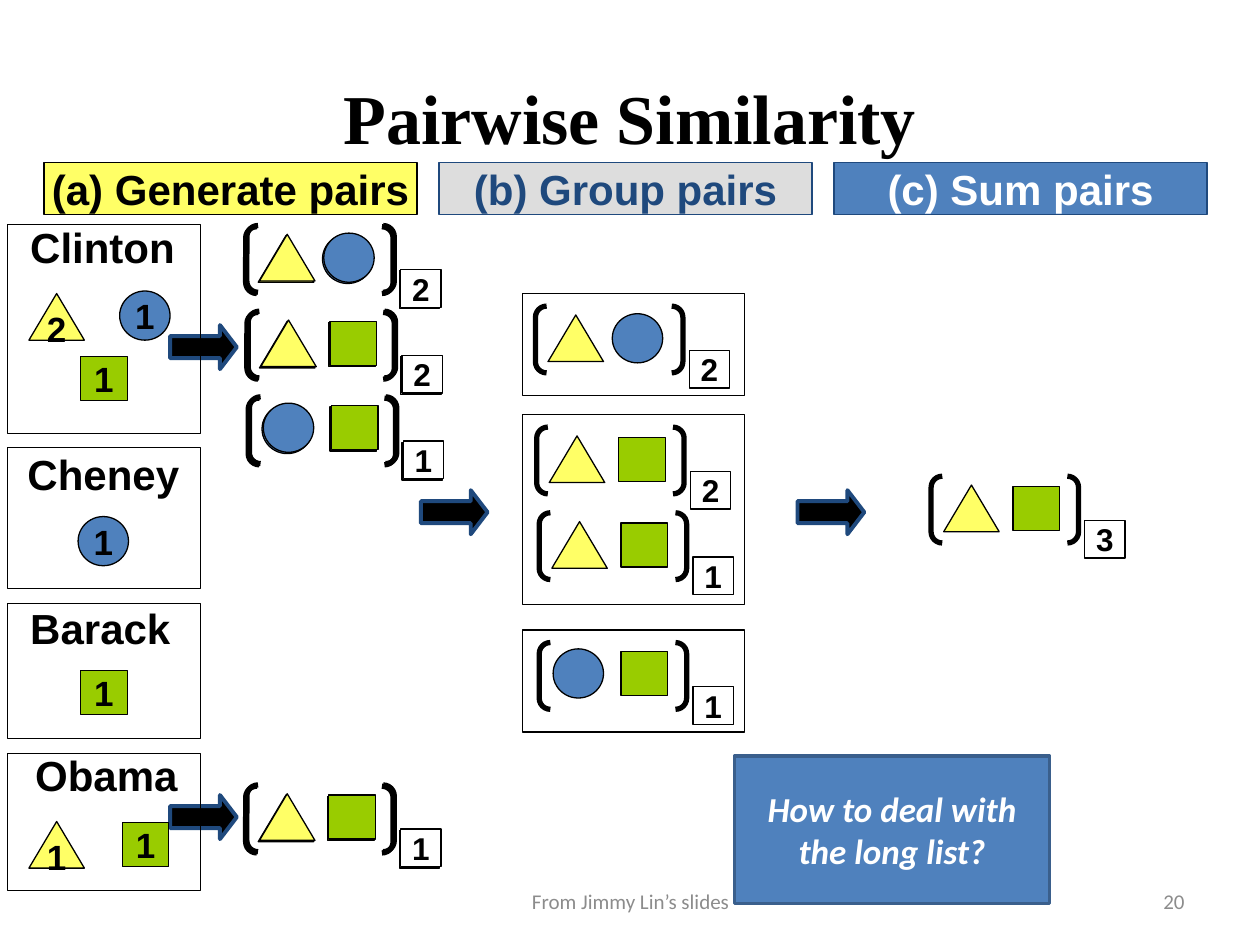
"""Build the Pairwise Similarity slide: generate, group and sum pairs."""
from typing import NamedTuple

from pptx import Presentation
from pptx.dml.color import RGBColor
from pptx.enum.shapes import MSO_SHAPE as SHAPE
from pptx.enum.text import MSO_ANCHOR as ANCHOR, PP_ALIGN as ALIGN
from pptx.util import Inches, Pt

BLACK, WHITE, NAVY, GREY = "000000", "FFFFFF", "1F497D", "8C8C8C"
YELLOW, BLUE, GREEN, SILVER = "FFFF66", "4F81BD", "99CC00", "DDDDDD"


class Mark(NamedTuple):
    kind: SHAPE
    w: float
    h: float
    fill: str


class Term(NamedTuple):
    mark: Mark
    x: float
    y: float
    count: str


class Document(NamedTuple):
    name: str
    name_x: float
    name_y: float
    align: ALIGN
    y: float
    h: float
    terms: list[Term]


class Slot(NamedTuple):
    mark: Mark
    dx: float
    dy: float


class Pair(NamedTuple):
    x: float
    y: float
    slots: list[Slot]
    count: str


class Header(NamedTuple):
    text: str
    fill: str
    color: str
    line: str


TRIANGLE = Mark(SHAPE.ISOSCELES_TRIANGLE, 0.44, 0.37, YELLOW)
CIRCLE = Mark(SHAPE.OVAL, 0.4, 0.39, BLUE)
SQUARE = Mark(SHAPE.RECTANGLE, 0.37, 0.35, GREEN)

TRIANGLE_CIRCLE = [Slot(TRIANGLE, 0.1, 0.07), Slot(CIRCLE, 0.61, 0.06)]
TRIANGLE_SQUARE = [Slot(TRIANGLE, 0.1, 0.07), Slot(SQUARE, 0.65, 0.08)]
CIRCLE_SQUARE = [Slot(CIRCLE, 0.11, 0.05), Slot(SQUARE, 0.65, 0.07)]

HEADERS = [
    Header("(a) Generate pairs", YELLOW, BLACK, BLACK),
    Header("(b) Group pairs", SILVER, NAVY, NAVY),
    Header("(c) Sum pairs", BLUE, WHITE, NAVY),
]
DOCUMENTS = [
    Document("Clinton", 0.24, 1.76, ALIGN.LEFT, 1.78, 1.66, [
        Term(TRIANGLE, 0.23, 2.33, "2"),
        Term(CIRCLE, 0.95, 2.31, "1"),
        Term(SQUARE, 0.64, 2.83, "1"),
    ]),
    Document("Cheney", 0.11, 3.56, ALIGN.CENTER, 3.55, 1.12,
             [Term(CIRCLE, 0.62, 4.1, "1")]),
    Document("Barack", 0.24, 4.78, ALIGN.LEFT, 4.79, 1.07,
             [Term(SQUARE, 0.64, 5.32, "1")]),
    Document("Obama", 0.28, 5.95, ALIGN.LEFT, 5.98, 1.09, [
        Term(TRIANGLE, 0.23, 6.52, "1"),
        Term(SQUARE, 0.97, 6.53, "1"),
    ]),
]
GENERATED = [
    Pair(1.96, 1.79, TRIANGLE_CIRCLE, "2"),
    Pair(1.97, 2.47, TRIANGLE_SQUARE, "2"),
    Pair(1.98, 3.15, CIRCLE_SQUARE, "1"),
    Pair(1.96, 6.23, TRIANGLE_SQUARE, "1"),
]
GROUPED = [
    Pair(4.25, 2.43, TRIANGLE_CIRCLE, "2"),
    Pair(4.26, 3.39, TRIANGLE_SQUARE, "2"),
    Pair(4.28, 4.07, TRIANGLE_SQUARE, "1"),
    Pair(4.28, 5.1, CIRCLE_SQUARE, "1"),
]
SUMMED = [Pair(7.39, 3.78, TRIANGLE_SQUARE, "3")]
ARROWS = [(1.35, 2.58), (1.35, 6.31), (3.34, 3.89), (6.33, 3.89)]
GROUP_BOXES = [(2.33, 0.81), (3.29, 1.51), (5, 0.81)]


def rgb(color: str) -> RGBColor:
    """Turn a hex string into a colour."""
    return RGBColor.from_string(color)


def write(sp, text: str, *, size=24, font="Arial", color=BLACK, bold=True,
          italic=False, align=ALIGN.CENTER, wrap=True, inset=(0, 0)) -> None:
    """Put one formatted paragraph into a shape."""
    tf = sp.text_frame
    tf.word_wrap = wrap
    tf.vertical_anchor = ANCHOR.MIDDLE
    tf.margin_left = tf.margin_right = Inches(inset[0])
    tf.margin_top = tf.margin_bottom = Inches(inset[1])
    p = tf.paragraphs[0]
    p.alignment = align
    r = p.add_run()
    r.text = text
    r.font.name, r.font.size = font, Pt(size)
    r.font.bold, r.font.italic = bold, italic
    r.font.color.rgb = rgb(color)


def add_text(shapes, x: float, y: float, w: float, h: float, text: str, **style) -> None:
    """Add a text box."""
    write(shapes.add_textbox(Inches(x), Inches(y), Inches(w), Inches(h)), text, **style)


def add_box(shapes, kind: SHAPE, x: float, y: float, w: float, h: float,
            fill: str | None = None, line=BLACK, weight=0.75):
    """Add an outlined shape, filled when a fill is given."""
    sp = shapes.add_shape(kind, Inches(x), Inches(y), Inches(w), Inches(h))
    sp.shadow.inherit = False
    if fill:
        sp.fill.solid()
        sp.fill.fore_color.rgb = rgb(fill)
    else:
        sp.fill.background()
    sp.line.color.rgb = rgb(line)
    sp.line.width = Pt(weight)
    return sp


def add_mark(shapes, mark: Mark, x: float, y: float):
    """Add a term symbol."""
    return add_box(shapes, mark.kind, x, y, mark.w, mark.h, mark.fill)


def add_document(shapes, doc: Document) -> None:
    """Add a document frame with its name and counted terms."""
    width = 1.42 if doc.align == ALIGN.CENTER else 1.16
    add_text(shapes, doc.name_x, doc.name_y, width, 0.4, doc.name, align=doc.align)
    add_box(shapes, SHAPE.RECTANGLE, 0.06, doc.y, 1.53, doc.h)
    for term in doc.terms:
        sp = add_mark(shapes, term.mark, term.x, term.y)
        write(sp, term.count, size=20, wrap=False, inset=(0.1, 0.05))


def add_pair(shapes, pair: Pair) -> None:
    """Add a bracketed pair of terms with its count, as one group."""
    group = shapes.add_group_shape().shapes
    count = add_box(group, SHAPE.RECTANGLE, pair.x + 1.22, pair.y + 0.35, 0.32, 0.3, WHITE)
    write(count, pair.count, size=18, wrap=False)
    bracket = add_box(group, SHAPE.DOUBLE_BRACKET, pair.x, pair.y, 1.17, 0.53, weight=3)
    bracket.adjustments[0] = 0.167
    for slot in pair.slots:
        add_mark(group, slot.mark, pair.x + slot.dx, pair.y + slot.dy)


def main() -> None:
    """Build and save the slide."""
    prs = Presentation()
    prs.slide_width, prs.slide_height = Inches(10), Inches(7.5)
    shapes = prs.slides.add_slide(prs.slide_layouts[6]).shapes

    add_text(shapes, 0.5, 0.3, 9, 1.25, "Pairwise Similarity", size=40,
             font="Times New Roman", inset=(0.1, 0.05))
    for i, header in enumerate(HEADERS):
        sp = add_box(shapes, SHAPE.RECTANGLE, 0.35 + 3.135 * i, 1.29, 2.96, 0.41,
                     header.fill, header.line)
        write(sp, header.text, color=header.color)
    for x, y in ARROWS:
        sp = add_box(shapes, SHAPE.RIGHT_ARROW, x, y, 0.53, 0.35, BLACK, NAVY, 2.25)
        sp.adjustments[1] = 0.382
    for doc in DOCUMENTS:
        add_document(shapes, doc)
    under = [pair._replace(x=pair.x - 0.01, y=pair.y + 0.01) for pair in GENERATED]
    for pair in under + GENERATED + GROUPED + SUMMED:
        add_pair(shapes, pair)
    for y, h in GROUP_BOXES:
        add_box(shapes, SHAPE.RECTANGLE, 4.15, y, 1.76, h)

    question = add_box(shapes, SHAPE.FLOWCHART_PROCESS, 5.83, 6, 2.5, 1.17, BLUE, "3A5F8C", 2)
    write(question, "How to deal with the long list?", size=20, font="Calibri",
          color=WHITE, italic=True, inset=(0.1, 0.05))
    footer = dict(size=12, font="Calibri", color=GREY, bold=False, inset=(0.1, 0.05))
    add_text(shapes, 3.42, 6.95, 3.17, 0.4, "From Jimmy Lin’s slides", **footer)
    add_text(shapes, 7.17, 6.95, 2.33, 0.4, "20", align=ALIGN.RIGHT, **footer)
    prs.save("out.pptx")


if __name__ == "__main__":
    main()
